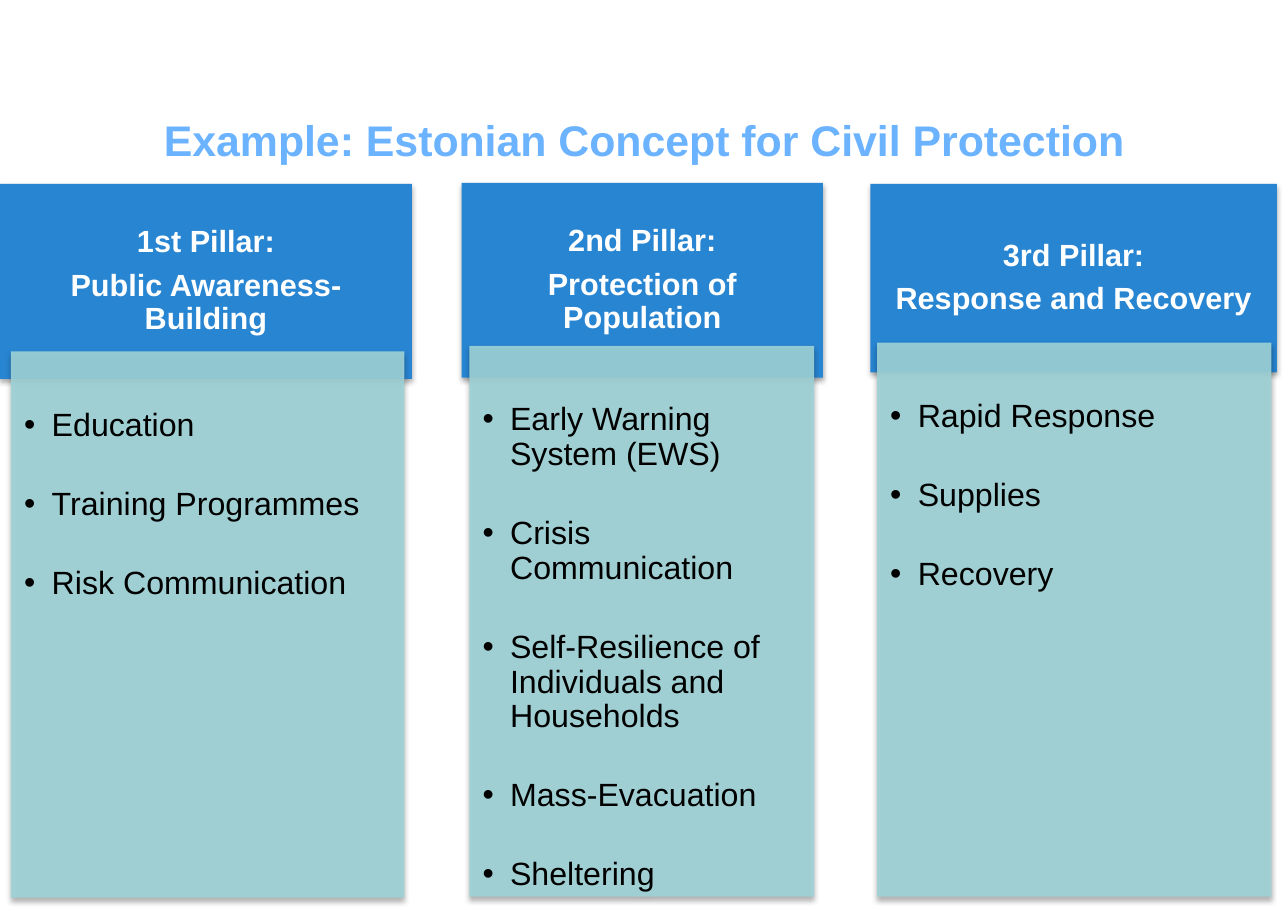
from dataclasses import dataclass

from lxml.etree import SubElement
from pptx import Presentation
from pptx.dml.color import RGBColor
from pptx.enum.shapes import MSO_SHAPE
from pptx.enum.text import MSO_ANCHOR, PP_ALIGN
from pptx.oxml.ns import qn
from pptx.util import Inches, Pt


@dataclass(frozen=True)
class Theme:
    font: str = "Arial"
    title_color: str = "6CB3FF"
    header_fill: str = "2885D2"
    header_color: str = "FFFFFF"
    body_fill: str = "9ED3D7"
    body_color: str = "000000"
    shadow_color: str = "000000"
    title_size: int = 28
    header_size: int = 20
    body_size: int = 21


class PillarSlide:
    def __init__(self, presentation, theme):
        self.theme = theme
        self.slide = presentation.slides.add_slide(presentation.slide_layouts[6])

    def add_text(self, shape, lines, size, color, bold, insets, anchor,
                 align=PP_ALIGN.LEFT, spacing=1.0, after=0, bullets=False):
        frame = shape.text_frame
        frame.word_wrap = True
        frame.vertical_anchor = anchor
        (frame.margin_left, frame.margin_top,
         frame.margin_right, frame.margin_bottom) = map(Inches, insets)
        for index, line in enumerate(lines):
            paragraph = frame.add_paragraph() if index else frame.paragraphs[0]
            paragraph.alignment = align
            paragraph.line_spacing = spacing
            paragraph.space_after = Pt(after)
            if bullets:
                self.add_bullet(paragraph)
            run = paragraph.add_run()
            run.text = line
            run.font.name = self.theme.font
            run.font.size = Pt(size)
            run.font.bold = bold
            run.font.color.rgb = RGBColor.from_string(color)

    def add_bullet(self, paragraph):
        properties = paragraph._p.get_or_add_pPr()
        properties.set("marL", str(Inches(0.25)))
        properties.set("indent", str(-Inches(0.25)))
        SubElement(properties, qn("a:buFont"), typeface=self.theme.font)
        SubElement(properties, qn("a:buChar"), char="•")

    def add_title(self, box, text):
        shape = self.slide.shapes.add_textbox(*map(Inches, box))
        self.add_text(shape, [text], self.theme.title_size, self.theme.title_color, True,
                      (0.11, 0.05, 0.11, 0.05), MSO_ANCHOR.MIDDLE, PP_ALIGN.CENTER)

    def add_panel(self, box, fill, opacity=100):
        shape = self.slide.shapes.add_shape(MSO_SHAPE.RECTANGLE, *map(Inches, box))
        shape.fill.solid()
        shape.fill.fore_color.rgb = RGBColor.from_string(fill)
        shape.line.fill.background()
        properties = shape._element.spPr
        if opacity < 100:
            color = properties.find(qn("a:solidFill")).find(qn("a:srgbClr"))
            SubElement(color, qn("a:alpha"), val=str(opacity * 1000))
        # Soft shadow straight below the panel
        shape.shadow.inherit = False
        shadow = SubElement(properties.find(qn("a:effectLst")), qn("a:outerShdw"),
                            blurRad=str(Pt(3.5)), dist=str(Pt(2.2)),
                            dir="5400000", rotWithShape="0")
        color = SubElement(shadow, qn("a:srgbClr"), val=self.theme.shadow_color)
        SubElement(color, qn("a:alpha"), val="32000")
        return shape

    def add_header(self, box, lines):
        shape = self.add_panel(box, self.theme.header_fill)
        self.add_text(shape, lines, self.theme.header_size, self.theme.header_color, True,
                      (0.16, 0.09, 0.16, 0.09), MSO_ANCHOR.MIDDLE, PP_ALIGN.CENTER,
                      spacing=0.9, after=7)

    def add_body(self, box, items):
        shape = self.add_panel(box, self.theme.body_fill, opacity=90)
        self.add_text(shape, items, self.theme.body_size, self.theme.body_color, False,
                      (0.12, 0.52, 0.16, 0.18), MSO_ANCHOR.TOP,
                      spacing=0.9, after=29, bullets=True)


# Each pillar: header box, header lines, body box, bullet items
PILLARS = [
    ((0, 1.67, 3.74, 1.77), ["1st Pillar:", "Public Awareness-Building"],
     (0.1, 3.19, 3.57, 4.96),
     ["Education", "Training Programmes", "Risk Communication"]),
    ((4.19, 1.66, 3.28, 1.77), ["2nd Pillar:", "Protection of Population"],
     (4.26, 3.14, 3.13, 5),
     ["Early Warning System (EWS)", "Crisis Communication",
      "Self-Resilience of Individuals and Households", "Mass-Evacuation", "Sheltering"]),
    ((7.9, 1.67, 3.69, 1.71), ["3rd Pillar:", "Response and Recovery"],
     (7.96, 3.11, 3.58, 5.03),
     ["Rapid Response", "Supplies", "Recovery"]),
]


def main():
    presentation = Presentation()
    presentation.slide_width = Inches(11.69)
    presentation.slide_height = Inches(8.27)
    page = PillarSlide(presentation, Theme())

    # Title
    page.add_title((0, 0.91, 11.69, 0.71), "Example: Estonian Concept for Civil Protection")

    # Pillars, each body overlapping its header
    for header_box, header_lines, body_box, items in PILLARS:
        page.add_header(header_box, header_lines)
        page.add_body(body_box, items)

    presentation.save("out.pptx")


if __name__ == "__main__":
    main()
